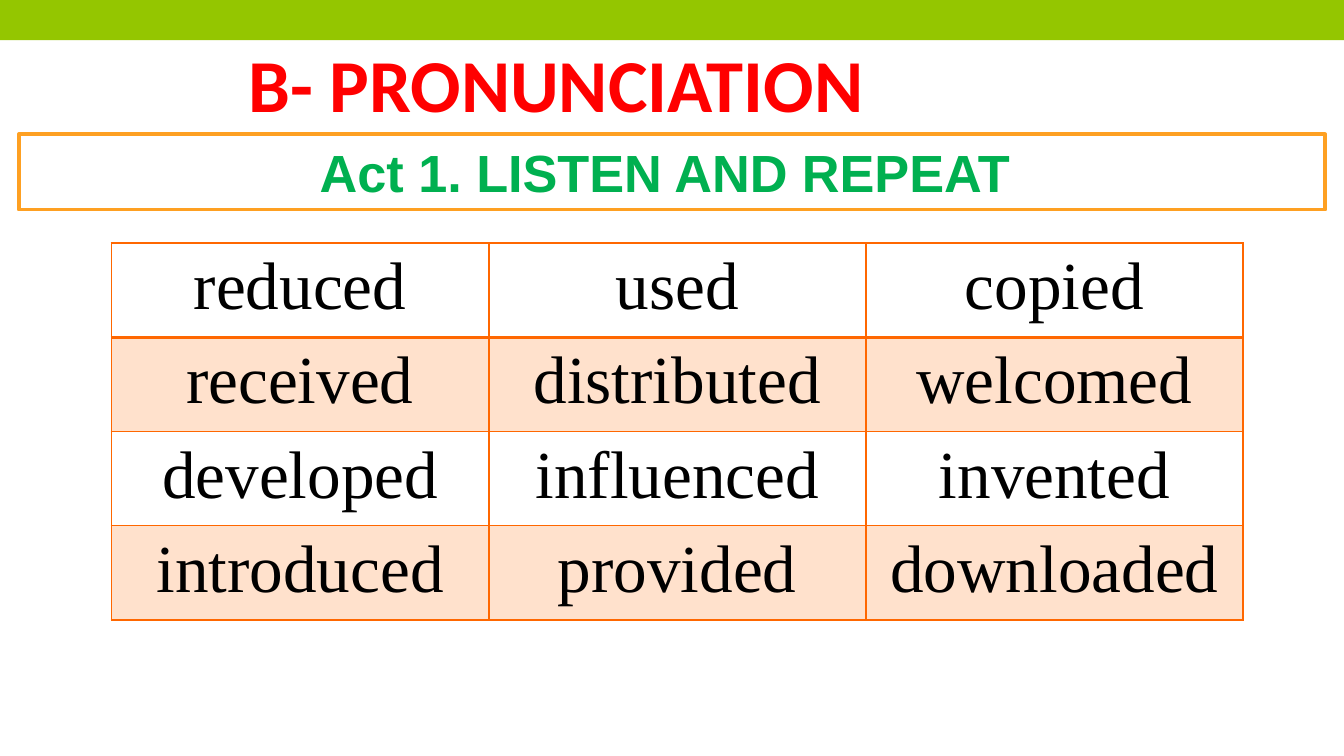
from dataclasses import dataclass

import lxml.etree
import pptx
import pptx.dml.color
import pptx.enum.shapes
import pptx.enum.text
import pptx.oxml.ns
import pptx.util

Inches = pptx.util.Inches
Pt = pptx.util.Pt
PP_ALIGN = pptx.enum.text.PP_ALIGN

COLOURS = {
    "bar": "94C600",
    "title": "FF0000",
    "activity": "00B050",
    "frame": "FEA022",
    "paper": "FFFFFF",
    "word": "000000",
    "grid": "FF6700",
    "band": "FFE1CC",
}

WORDS = [
    ["reduced", "used", "copied"],
    ["received", "distributed", "welcomed"],
    ["developed", "influenced", "invented"],
    ["introduced", "provided", "downloaded"],
]
TABLE_WIDTH, ROW_HEIGHT = 8.42, 0.7


@dataclass
class Box:
    left: float
    top: float
    width: float
    height: float

    def lengths(self) -> list[int]:
        return [Inches(v) for v in (self.left, self.top, self.width, self.height)]


@dataclass
class Style:
    font: str
    size: float
    colour: str
    bold: bool = False
    align: PP_ALIGN = PP_ALIGN.CENTER


TITLE = Style("Calibri", 40, "title", True, PP_ALIGN.LEFT)
ACTIVITY = Style("Arial", 28, "activity", True)
WORD = Style("Times New Roman", 36, "word")


def rgb(name: str) -> pptx.dml.color.RGBColor:
    return pptx.dml.color.RGBColor.from_string(COLOURS[name])


def write(frame, text: str, style: Style) -> None:
    paragraph = frame.paragraphs[0]
    paragraph.alignment = style.align
    run = paragraph.add_run()
    run.text = text
    font_format = {"name": style.font, "size": Pt(style.size), "bold": style.bold}
    for attribute, value in font_format.items():
        setattr(run.font, attribute, value)
    run.font.color.rgb = rgb(style.colour)


def add_panel(slide, box: Box, fill: str, line: str | None = None):
    panel = slide.shapes.add_shape(
        pptx.enum.shapes.MSO_SHAPE.RECTANGLE, *box.lengths())
    panel.shadow.inherit = False
    panel.fill.solid()
    panel.fill.fore_color.rgb = rgb(fill)
    if line:
        panel.line.color.rgb = rgb(line)
        panel.line.width = Pt(2.08)
    else:
        panel.line.fill.background()
    return panel


def set_borders(cell, widths: dict[str, float]) -> None:
    properties = cell._tc.get_or_add_tcPr()
    qn = pptx.oxml.ns.qn
    for position, (side, width) in enumerate(widths.items()):
        border = lxml.etree.Element(qn(f"a:ln{side}"), w=str(Pt(width)))
        fill = lxml.etree.SubElement(border, qn("a:solidFill"))
        lxml.etree.SubElement(fill, qn("a:srgbClr"), val=COLOURS["grid"])
        properties.insert(position, border)


def add_word_table(slide, left: float, top: float) -> None:
    rows, columns = len(WORDS), len(WORDS[0])
    box = Box(left, top, TABLE_WIDTH, rows * ROW_HEIGHT)
    table = slide.shapes.add_table(rows, columns, *box.lengths()).table
    for option in ("first_row", "horz_banding"):
        setattr(table, option, False)
    for r, words in enumerate(WORDS):
        table.rows[r].height = Inches(ROW_HEIGHT)
        for c, word in enumerate(words):
            cell = table.cell(r, c)
            write(cell.text_frame, word, WORD)
            if r % 2:
                cell.fill.solid()
                cell.fill.fore_color.rgb = rgb("band")
            else:
                cell.fill.background()
            # The rule under the first row is heavier
            set_borders(cell, {"L": 1, "R": 1, "T": 2 if r == 1 else 1,
                               "B": 2 if r == 0 else 1})


def main() -> None:
    deck = pptx.Presentation()
    # Widescreen, 16 to 9
    deck.slide_width = Inches(10)
    deck.slide_height = Inches(10 * 9 / 16)
    slide = deck.slides.add_slide(deck.slide_layouts[6])

    # Top bar
    add_panel(slide, Box(0, 0, 10, 0.3), "bar")

    # Section title
    title = slide.shapes.add_textbox(*Box(1.75, 0.23, 6.5, 0.77).lengths())
    title.text_frame.word_wrap = True
    write(title.text_frame, "B- PRONUNCIATION", TITLE)

    # Activity heading
    activity = add_panel(slide, Box(0.14, 1, 9.72, 0.56), "paper", "frame")
    activity.text_frame.vertical_anchor = pptx.enum.text.MSO_ANCHOR.MIDDLE
    write(activity.text_frame, "Act 1. LISTEN AND REPEAT ", ACTIVITY)

    # Words to repeat
    add_word_table(slide, 0.83, 1.81)

    deck.save("out.pptx")


if __name__ == "__main__":
    main()
